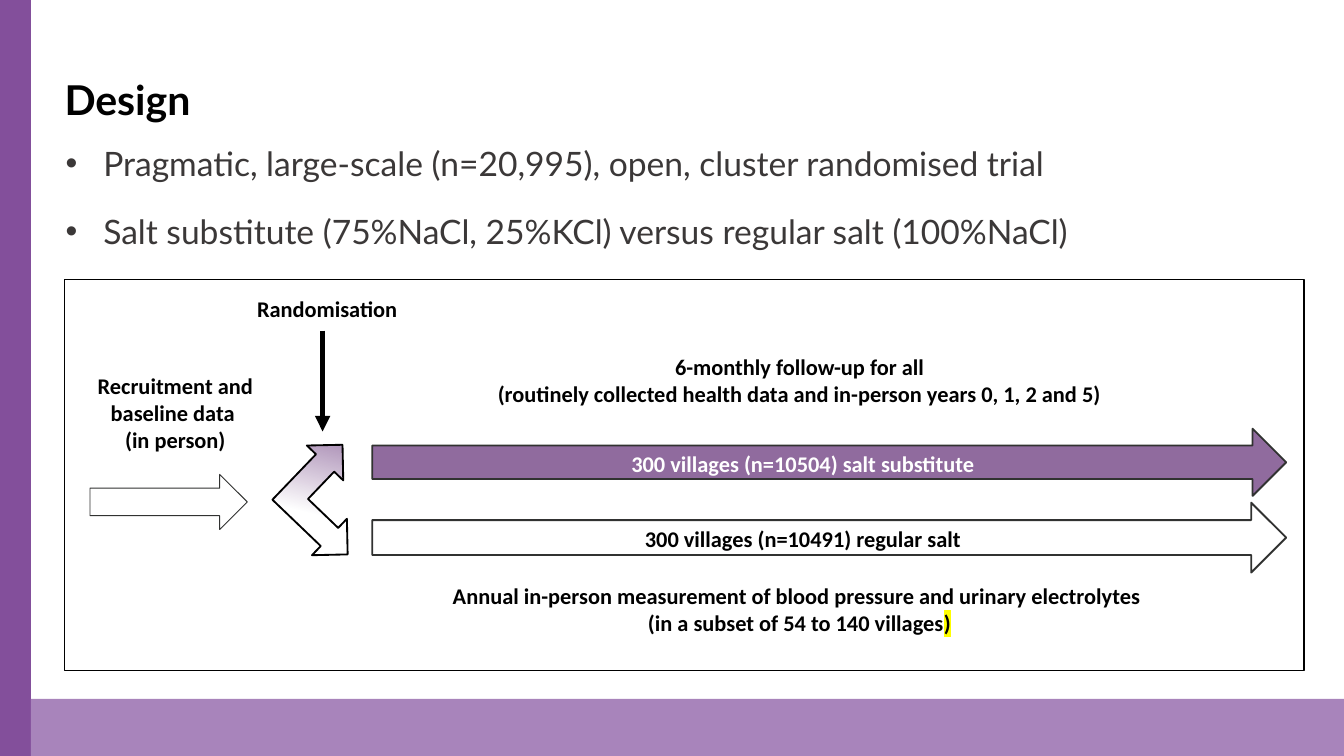
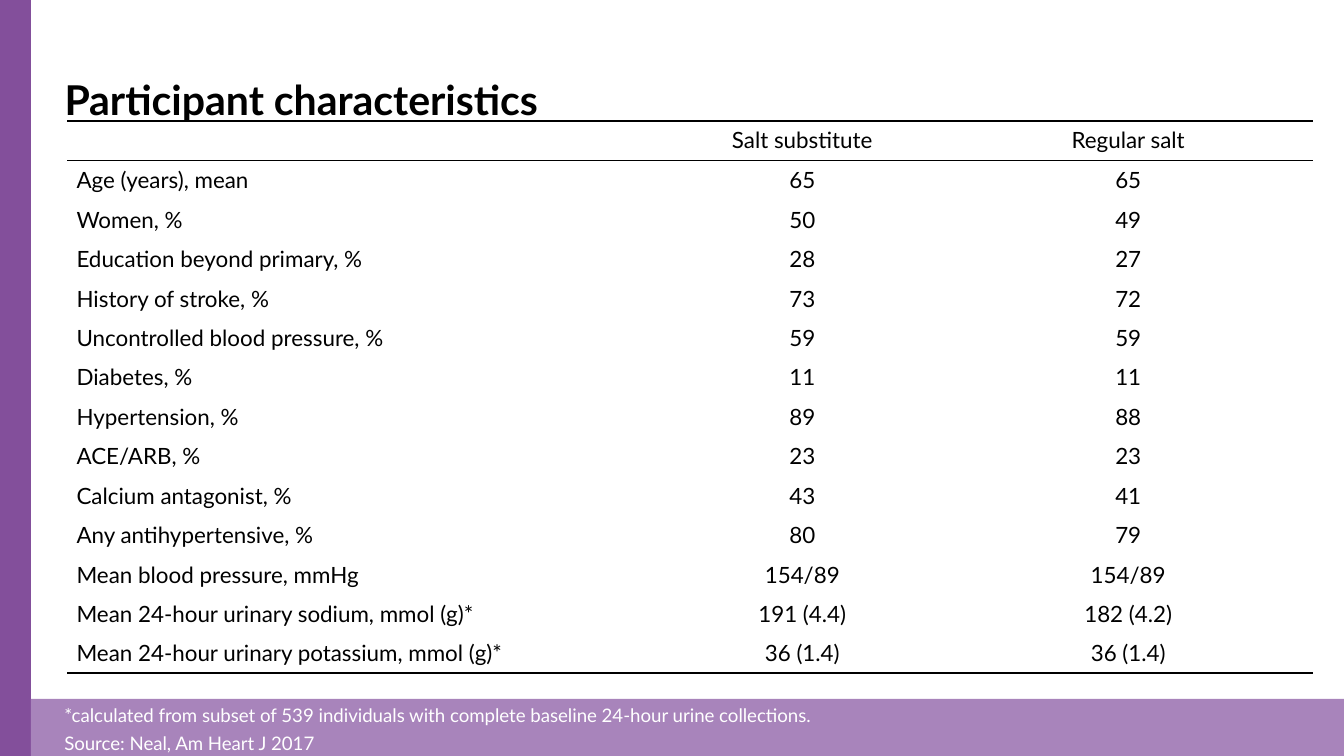
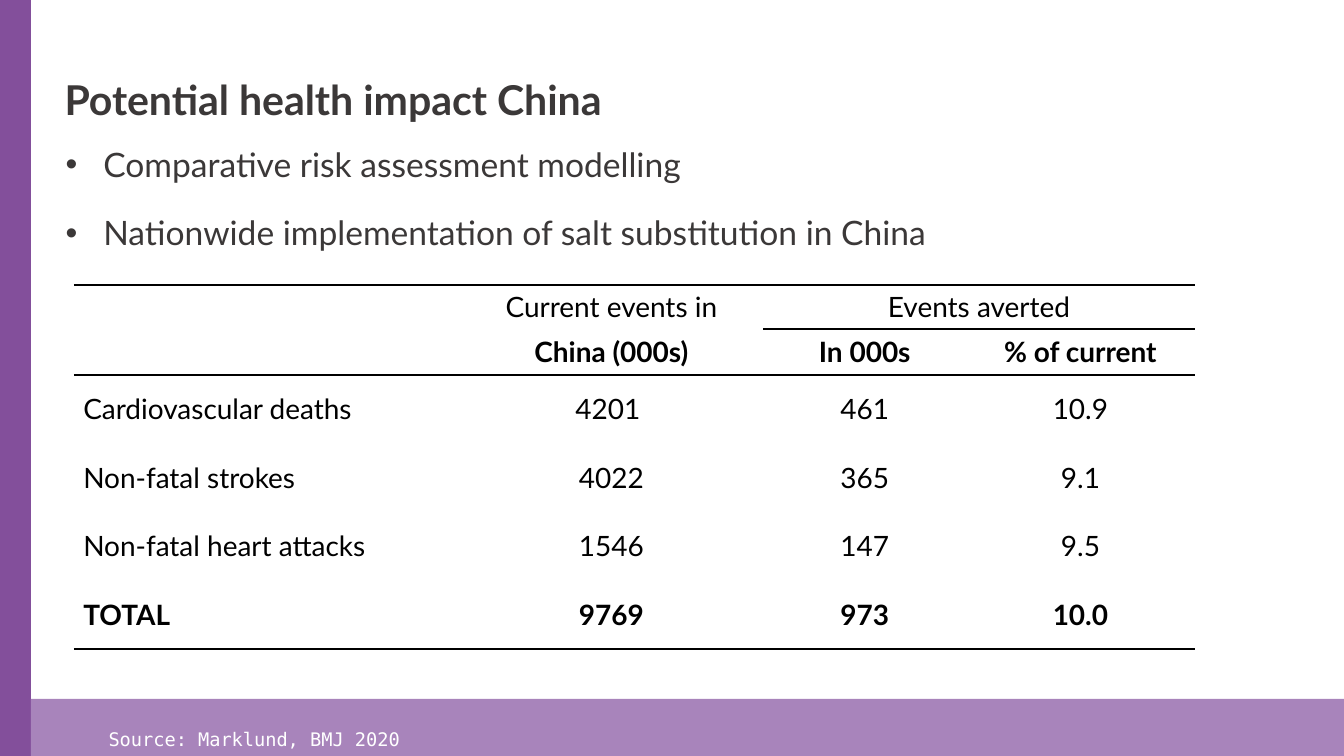
"""Build three slides on a salt substitution trial."""
from dataclasses import dataclass

from lxml.etree import SubElement
from pptx import Presentation
from pptx.dml.color import RGBColor
from pptx.enum.shapes import MSO_CONNECTOR, MSO_SHAPE
from pptx.enum.text import MSO_ANCHOR, MSO_AUTO_SIZE, PP_ALIGN
from pptx.oxml.ns import qn
from pptx.util import Inches, Pt


@dataclass(frozen=True)
class Theme:
    """Colours, fonts and type sizes."""
    black: str = "000000"
    white: str = "FFFFFF"
    ink: str = "3B3838"
    edge: str = "313231"
    side: str = "834F9B"
    foot: str = "A884BB"
    plum: str = "906B9E"
    mark: str = "FFFF00"
    main: str = "Lato"
    label: str = "Calibri"
    mono: str = "DejaVu Sans Mono"
    head: int = 22
    body: int = 18
    large: int = 15
    small: int = 12
    note: int = 10


def rgb(code):
    """Turn a hex code into a colour."""
    return RGBColor.from_string(code)


class Deck:
    """Hold the style and the current slide."""

    def __init__(self, theme):
        """Start an empty 16:9 deck."""
        self.theme = theme
        self.show = Presentation()
        self.show.slide_width = Inches(10)
        self.show.slide_height = Inches(10) * 9 // 16
        self.plan = self.show.slide_layouts[5]
        self.page = None

    def bands(self):
        """Put the side and foot bands on the layout."""
        for spot in list(self.plan.placeholders)[1:]:
            spot.element.getparent().remove(spot.element)
        side = self.shape(MSO_SHAPE.RECTANGLE, (0, 0, 0.23, 5.63), self.theme.side)
        foot = self.shape(MSO_SHAPE.RECTANGLE, (0.23, 5.2, 9.77, 0.43), self.theme.foot)
        for band in (foot, side):
            self.plan.shapes.element.insert(2, band.element)

    def slide(self, title, color):
        """Add a slide with its title."""
        first = self.page is None
        self.page = self.show.slides.add_slide(self.plan)
        if first:
            self.bands()
        head = self.page.shapes.title
        head.left, head.top, head.width, head.height = map(Inches, (0.38, 0.24, 9.45, 0.73))
        frame = head.text_frame
        frame.text = title
        frame.auto_size = MSO_AUTO_SIZE.NONE
        frame.vertical_anchor = MSO_ANCHOR.BOTTOM
        para = frame.paragraphs[0]
        para.alignment = PP_ALIGN.LEFT
        para.line_spacing = 1.14
        self.font(para, self.theme.main, self.theme.head, color, True)

    def font(self, para, name, size, color, bold=False):
        """Set the font of a paragraph."""
        font = para.font
        font.name, font.size, font.bold = name, Pt(size), bold
        font.color.rgb = rgb(color)

    def box(self, area, lines):
        """Add a wrapped text box and return its paragraphs."""
        frame = self.page.shapes.add_textbox(*map(Inches, area)).text_frame
        frame.word_wrap = True
        frame.text = "\n".join(lines)
        return frame.paragraphs

    def points(self, top, lines):
        """Add the bulleted list."""
        for rank, para in enumerate(self.box((0.39, top, 9.45, 3.72), lines)):
            props = para._p.get_or_add_pPr()
            props.set("marL", str(Inches(0.28)))
            props.set("indent", str(-Inches(0.28)))
            SubElement(props, qn("a:buFont"), typeface="Arial")
            SubElement(props, qn("a:buChar"), char="•")
            para.line_spacing = 1.14
            para.space_before = Pt(6 if rank else 0)
            para.space_after = Pt(6)
            self.font(para, self.theme.main, self.theme.body, self.theme.ink)

    def label(self, area, *lines, color=None):
        """Add a bold centred label and return its last paragraph."""
        paras = self.box(area, lines)
        for para in paras:
            para.alignment = PP_ALIGN.CENTER
            self.font(para, self.theme.label, self.theme.small, color or self.theme.black, True)
        return paras[-1]

    def accent(self, para, text):
        """Add a highlighted run to a paragraph."""
        run = para.add_run()
        run.text = text
        light = SubElement(run._r.get_or_add_rPr(), qn("a:highlight"))
        SubElement(light, qn("a:srgbClr"), val=self.theme.mark)

    def note(self, area, *lines, name=None):
        """Add a note on the foot band."""
        for rank, para in enumerate(self.box(area, lines)):
            para.line_spacing = 1.1
            para.space_before = Pt(2 if rank else 0)
            self.font(para, name or self.theme.main, self.theme.note, self.theme.white)

    def shape(self, kind, area, fill=None, line=None, width=1):
        """Add a preset shape."""
        item = self.page.shapes.add_shape(kind, *map(Inches, area))
        item.shadow.inherit = False
        if fill:
            item.fill.solid()
            item.fill.fore_color.rgb = rgb(fill)
        else:
            item.fill.background()
        if line:
            item.line.color.rgb = rgb(line)
            item.line.width = Pt(width)
        else:
            item.line.fill.background()
        return item

    def fork(self, area):
        """Add the two-way arrow with its gradient."""
        item = self.shape(MSO_SHAPE.LEFT_UP_ARROW, area, line=self.theme.black)
        item.rotation = 133.8
        item.fill.gradient()
        item.fill.gradient_angle = 210
        ends = ((0.4, self.theme.white), (1, self.theme.plum))
        for stop, (place, color) in zip(item.fill.gradient_stops, ends):
            stop.position = place
            stop.color.rgb = rgb(color)

    def arrow(self, start, end):
        """Add a thick line with an arrowhead."""
        line = self.page.shapes.add_connector(MSO_CONNECTOR.STRAIGHT, *map(Inches, start + end))
        line.line.color.rgb = rgb(self.theme.black)
        line.line.width = Pt(2.75)
        SubElement(line.line._get_or_add_ln(), qn("a:tailEnd"), type="triangle")
        SubElement(line.element.spPr, qn("a:effectLst"))

    def edges(self, cell, ruled):
        """Draw the ruled borders of a cell and clear the others."""
        props = cell._tc.get_or_add_tcPr()
        for edge in "LRTB":
            if edge in ruled:
                line = SubElement(props, qn(f"a:ln{edge}"), w=str(Pt(1)))
                fill = SubElement(line, qn("a:solidFill"))
                SubElement(fill, qn("a:srgbClr"), val=self.theme.black)
            else:
                SubElement(SubElement(props, qn(f"a:ln{edge}")), qn("a:noFill"))

    def table(self, spot, cols, highs, data, rules, size, heads=1, bold=()):
        """Add a table; rules map each ruled line to its first column."""
        area = (*spot, sum(cols), sum(highs))
        grid = self.page.shapes.add_table(len(data), len(cols), *map(Inches, area)).table
        grid.first_row = grid.horz_banding = False
        grid._tbl.tblPr.find(qn("a:tableStyleId")).text = "{2D5ABB26-0587-4C30-8999-92F81FD0307C}"
        for col, width in zip(grid.columns, cols):
            col.width = Inches(width)
        for row, high in zip(grid.rows, highs):
            row.height = Inches(high)
        for row, texts in enumerate(data):
            for col, text in enumerate(texts):
                cell = grid.cell(row, col)
                self.edges(cell, [edge for edge, line in (("T", row), ("B", row + 1))
                                  if col >= rules.get(line, len(cols))])
                self.fill(cell, text, size, row in bold, row < heads, col > 0)
                if row:
                    cell.vertical_anchor = MSO_ANCHOR.MIDDLE
        return grid

    def fill(self, cell, text, size, bold, head, center):
        """Write and style one table cell."""
        cell.margin_left = cell.margin_right = Inches(0.07)
        cell.margin_top = cell.margin_bottom = Inches(0.04)
        if head:
            cell.fill.solid()
            cell.fill.fore_color.rgb = rgb(self.theme.white)
        else:
            cell.fill.background()
        para = cell.text_frame.paragraphs[0]
        para.alignment = PP_ALIGN.CENTER if center else PP_ALIGN.LEFT
        self.font(para, self.theme.main, size, self.theme.black, bold)
        if text:
            para.add_run().text = text
        else:
            SubElement(para._p, qn("a:endParaRPr"), sz=str(size * 100))


def design(deck):
    """Build the trial design slide."""
    tone = deck.theme
    deck.slide("Design", tone.black)
    deck.points(0.97, [
        "Pragmatic, large-scale (n=20,995), open, cluster randomised trial",
        "Salt substitute (75%NaCl, 25%KCl) versus regular salt (100%NaCl)",
    ])
    deck.label((0.54, 2.72, 1.53, 0.62), "Recruitment and baseline data ", "(in person)")
    deck.label((1.47, 2.15, 1.93, 0.27), "Randomisation")
    right = MSO_SHAPE.RIGHT_ARROW
    deck.shape(right, (0.67, 3.53, 1.17, 0.41), line=tone.edge, width=0.5)
    deck.fork((2.06, 3.33, 0.75, 0.78))
    deck.shape(right, (2.77, 3.19, 6.8, 0.5), tone.plum, tone.edge)
    deck.shape(right, (2.77, 3.74, 6.8, 0.52), line=tone.edge)
    deck.label((2.55, 2.58, 6.8, 0.45), "6-monthly follow-up for all",
               "(routinely collected health data and in-person years 0, 1, 2 and 5)")
    last = deck.label((2.68, 4.28, 6.5, 0.5),
                      "Annual in-person measurement of blood pressure and urinary electrolytes",
                      " (in a subset of 54 to 140 villages")
    deck.accent(last, ")")
    deck.label((2.77, 3.3, 6.41, 0.27), "300 villages (n=10504) salt substitute", color=tone.white)
    deck.label((2.77, 3.86, 6.41, 0.27), "300 villages (n=10491) regular salt")
    deck.arrow((2.4, 2.46), (2.4, 3.21))
    deck.shape(MSO_SHAPE.RECTANGLE, (0.48, 2.08, 9.22, 2.91), line=tone.black)


def people(deck):
    """Build the participant slide."""
    deck.slide("Participant characteristics", deck.theme.black)
    data = [
        ("", "Salt substitute", "Regular salt"),
        ("Age (years), mean", "65", "65"),
        ("Women, %", "50", "49"),
        ("Education beyond primary, %", "28", "27"),
        ("History of stroke, %", "73", "72"),
        ("Uncontrolled blood pressure, %", "59", "59"),
        ("Diabetes, %", "11", "11"),
        ("Hypertension, %", "89", "88"),
        ("ACE/ARB, %", "23", "23"),
        ("Calcium antagonist, %", "43", "41"),
        ("Any antihypertensive, %", "80", "79"),
        ("Mean blood pressure, mmHg", "154/89", "154/89"),
        ("Mean 24-hour urinary sodium, mmol (g)*", "191 (4.4)", "182 (4.2)"),
        ("Mean 24-hour urinary potassium, mmol (g)*", "36 (1.4)", "36 (1.4)"),
    ]
    count = len(data)
    deck.table((0.5, 0.9), (4.42, 2.1, 2.75), [4.11 / count] * count, data,
               {0: 0, 1: 0, count: 0}, deck.theme.small)
    deck.note((0.38, 5.17, 6.39, 0.21),
              "*calculated from subset of 539 individuals with complete baseline "
              "24-hour urine collections.",
              "Source: Neal, Am Heart J 2017")


def impact(deck):
    """Build the health impact slide."""
    deck.slide("Potential health impact China", deck.theme.ink)
    deck.points(0.98, [
        "Comparative risk assessment modelling",
        "Nationwide implementation of salt substitution in China",
    ])
    deck.note((0.71, 5.35, 2.43, 0.27), "Source: Marklund, BMJ 2020", name=deck.theme.mono)
    data = [
        ("", "Current events in", "Events averted", ""),
        ("", "China (000s)", "In 000s", "% of current"),
        ("Cardiovascular deaths", "4201 ", "461", "10.9"),
        ("Non-fatal strokes", "4022", "365", "9.1"),
        ("Non-fatal heart attacks", "1546", "147", "9.5"),
        ("TOTAL", "9769", "973", "10.0"),
    ]
    grid = deck.table((0.55, 2.12), (2.87, 2.26, 1.51, 1.7), [0.33, 0.34] + [0.51] * 4, data,
                      {0: 0, 1: 2, 2: 0, 6: 0}, deck.theme.large, heads=2, bold=(1, 5))
    grid.cell(0, 2).merge(grid.cell(0, 3))


def main():
    """Build and save the deck."""
    deck = Deck(Theme())
    for build in (design, people, impact):
        build(deck)
    deck.show.save("out.pptx")


if __name__ == "__main__":
    main()
